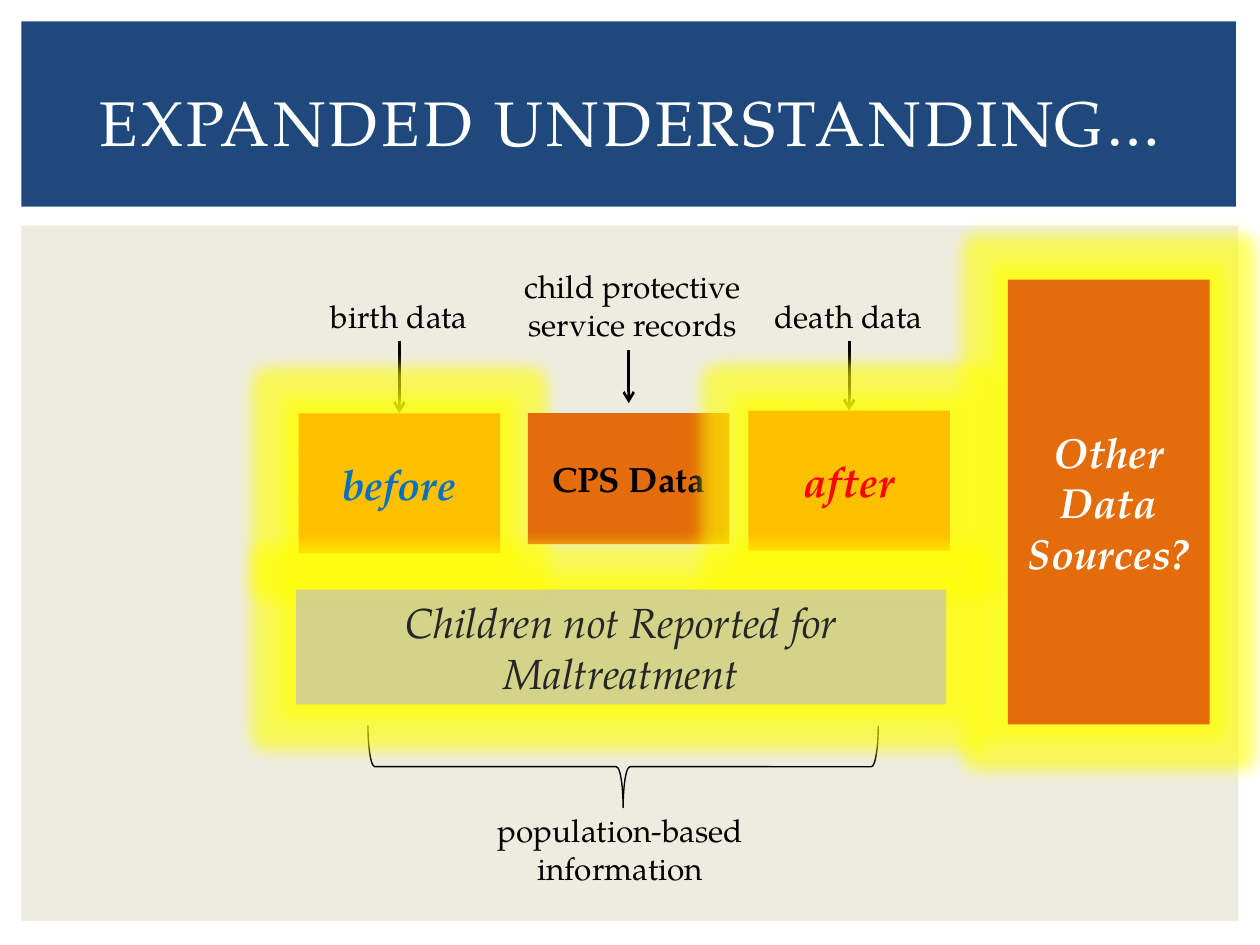
"""Build the slide on data around child protective service records."""
from lxml.etree import SubElement
from pptx import Presentation
from pptx.dml.color import RGBColor
from pptx.enum.shapes import MSO_CONNECTOR, MSO_SHAPE
from pptx.enum.text import MSO_ANCHOR, PP_ALIGN
from pptx.oxml.ns import qn
from pptx.util import Inches, Pt

FONT = "TeX Gyre Pagella"
BLACK, WHITE, GOLD, RUST = "000000", "FFFFFF", "FFC000", "E46C0A"


def color(code):
    return RGBColor.from_string(code)


class Page:
    def __init__(self, slide):
        self.slide = slide
        self.shapes = slide.shapes

    def letter(self, shape, text, size, tint, bold=False, slant=False):
        frame = shape.text_frame
        frame.text = text
        frame.word_wrap = True
        para = frame.paragraphs[0]
        para.alignment = PP_ALIGN.CENTER
        font = para.runs[0].font
        font.name, font.size = FONT, Pt(size)
        font.bold, font.italic = bold, slant
        font.color.rgb = color(tint)

    def title(self, text, *box):
        shape = self.shapes.title
        shape.left, shape.top, shape.width, shape.height = map(Inches, box)
        self.letter(shape, text, 36, WHITE)
        for props in shape.element.iter(qn("a:rPr")):
            props.set("spc", "200")
        shape.text_frame.vertical_anchor = MSO_ANCHOR.MIDDLE
        shape.element.getparent().append(shape.element)

    def label(self, text, *box):
        shape = self.shapes.add_textbox(*map(Inches, box))
        self.letter(shape, text, 18, BLACK)

    def block(self, fill, *box, glow=False, alpha=None):
        shape = self.shapes.add_shape(MSO_SHAPE.RECTANGLE, *map(Inches, box))
        shape.shadow.inherit = False
        shape.fill.solid()
        shape.fill.fore_color.rgb = color(fill)
        shape.line.fill.background()
        props = shape.element.spPr
        if alpha:
            tint = props.find(qn("a:solidFill")).find(qn("a:srgbClr"))
            SubElement(tint, qn("a:alpha"), val=str(alpha * 1000))
        if glow:
            halo = SubElement(props.find(qn("a:effectLst")), qn("a:glow"),
                              rad=str(int(Pt(18))))
            tint = SubElement(halo, qn("a:srgbClr"), val="FFFF00")
            SubElement(tint, qn("a:alpha"), val="60000")
        shape.text_frame.vertical_anchor = MSO_ANCHOR.MIDDLE
        return shape

    def arrow(self, x, top, end):
        shape = self.shapes.add_connector(
            MSO_CONNECTOR.STRAIGHT, *map(Inches, (x, top, x, end)))
        shape.line.color.rgb = color(BLACK)
        shape.line.width = Pt(1.5)
        props = shape.element.spPr
        SubElement(props.find(qn("a:ln")), qn("a:tailEnd"), type="arrow")
        SubElement(props, qn("a:effectLst"))
        return shape

    def brace(self, *box):
        shape = self.shapes.add_shape(MSO_SHAPE.RIGHT_BRACE, *map(Inches, box))
        shape.shadow.inherit = False
        shape.rotation = 90
        shape.fill.background()
        shape.line.color.rgb = color(BLACK)
        shape.line.width = Pt(0.79)


def main():
    deck = Presentation()
    deck.slide_width, deck.slide_height = Inches(10), Inches(7.5)
    page = Page(deck.slides.add_slide(deck.slide_layouts[5]))

    page.block("EEECE1", 0.17, 1.79, 9.66, 5.52)
    page.block("1F497D", 0.17, 0.17, 9.64, 1.47)
    page.title("EXPANDED UNDERSTANDING…", 0.42, 0.39, 9.17, 1.15)

    page.label("birth data", 2.46, 2.31, 1.42, 0.4)
    page.label("death data", 5.86, 2.31, 1.75, 0.4)
    birth = page.arrow(3.17, 2.71, 3.28)
    death = page.arrow(6.74, 2.71, 3.26)
    page.brace(4.62, 4.06, 0.65, 4.05)
    page.label("population-based information", 3.31, 6.39, 3.23, 0.71)
    page.label("child protective service records", 3.96, 2.07, 2.12, 0.71)
    page.arrow(4.99, 2.78, 3.2)

    prior = page.block(GOLD, 2.37, 3.28, 1.6, 1.11, glow=True)
    page.letter(prior, "before", 24, "0070C0", bold=True, slant=True)
    birth.end_connect(prior, 0)
    core = page.block(RUST, 4.19, 3.28, 1.6, 1.04)
    page.letter(core, "CPS Data", 20, BLACK, bold=True)
    later = page.block(GOLD, 5.94, 3.26, 1.6, 1.11, glow=True)
    page.letter(later, "after", 24, "FF0000", bold=True, slant=True)
    death.end_connect(later, 0)

    rest = page.block("BFBFBF", 2.35, 4.68, 5.16, 0.91, glow=True, alpha=66)
    page.letter(rest, "Children not Reported for Maltreatment", 24, "262626",
                slant=True)
    other = page.block(RUST, 8, 2.22, 1.6, 3.53, glow=True)
    page.letter(other, "Other Data Sources?", 24, WHITE, bold=True, slant=True)
    deck.save("out.pptx")


if __name__ == "__main__":
    main()
